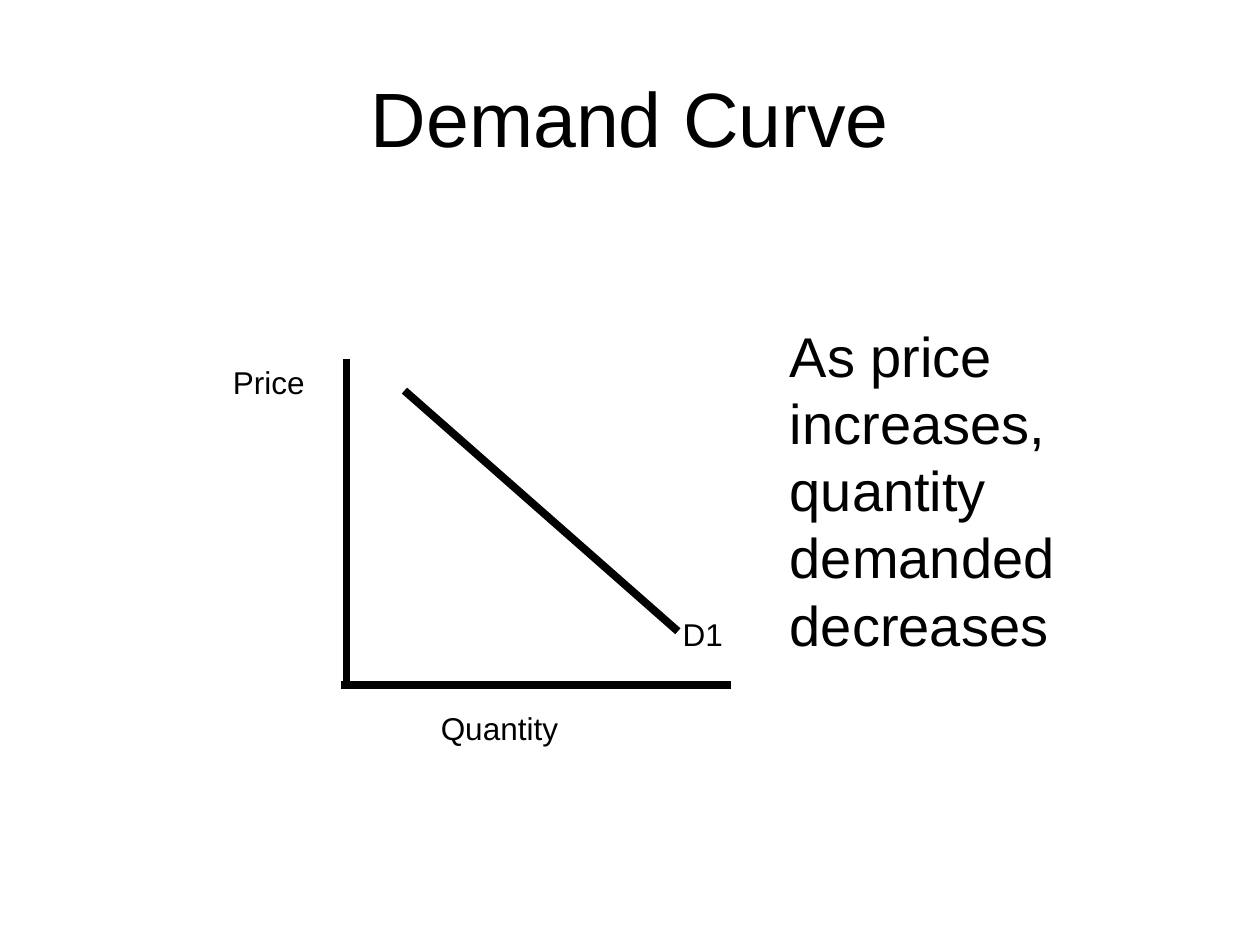
from lxml import etree
from pptx import Presentation
from pptx.dml.color import RGBColor
from pptx.enum.shapes import MSO_CONNECTOR
from pptx.enum.text import MSO_ANCHOR, PP_ALIGN
from pptx.oxml.ns import qn
from pptx.util import Pt

STRAIGHT = MSO_CONNECTOR.STRAIGHT
LEFT, CENTER = PP_ALIGN.LEFT, PP_ALIGN.CENTER
TOP, MIDDLE = MSO_ANCHOR.TOP, MSO_ANCHOR.MIDDLE
COLUMNS, ROWS = 10, 7.5
UNIT = Pt(72)
INK, PAPER = "000000", "FFFFFF"


def color(hex_code):
    """Turn a hex string into a colour."""
    return RGBColor.from_string(hex_code)


def grid(*cells):
    """Turn columns or rows of the grid into slide lengths."""
    return [round(cell * UNIT) for cell in cells]


def add_text(page, box, text, size, align=LEFT, anchor=TOP):
    """Place one wrapped paragraph in a box of grid units."""
    frame = page.shapes.add_textbox(*grid(*box)).text_frame
    frame.word_wrap = True
    frame.vertical_anchor = anchor
    para = frame.paragraphs[0]
    para.alignment = align
    span = para.add_run()
    span.text = text
    span.font.name = "Arial"
    span.font.size = Pt(size)
    span.font.color.rgb = color(INK)


def add_line(page, start, end):
    """Draw a thick straight line between two grid points."""
    line = page.shapes.add_connector(STRAIGHT, *grid(*start, *end))
    line.line.color.rgb = color(INK)
    line.line.width = Pt(4.5)
    properties = line.element.find(qn("p:spPr"))
    etree.SubElement(properties, qn("a:effectLst"))


def add_demand_diagram(page, box):
    """Draw the axes, the demand line and their labels inside a box."""
    left, top, width, height = box
    axis_x, axis_y = left + 1, top + height - 0.54
    lines = [
        ((axis_x, top + 0.02), (axis_x, axis_y - 0.01)),
        ((axis_x - 0.04, axis_y), (left + width - 0.27, axis_y)),
        ((axis_x + 0.46, top + 0.27), (left + width - 0.69, axis_y - 0.43)),
    ]
    labels = [
        ("Price", left, top, 0.83),
        ("Quantity", axis_x + 0.65, axis_y + 0.14, 1.42),
        ("D1", left + width - 0.75, axis_y - 0.61, 0.75),
    ]
    for start, end in lines:
        add_line(page, start, end)
    for text, x, y, label_width in labels:
        add_text(page, (x, y, label_width, 0.4), text, 18)


def main():
    """Build and save the demand curve slide."""
    deck = Presentation()
    deck.slide_width, deck.slide_height = grid(COLUMNS, ROWS)
    page = deck.slides.add_slide(deck.slide_layouts[6])
    page.background.fill.solid()
    page.background.fill.fore_color.rgb = color(PAPER)
    add_text(page, (0.5, 0.3, COLUMNS - 1, 1.25), "Demand Curve", 44, CENTER, MIDDLE)
    add_demand_diagram(page, (1.75, 2.83, 4.32, 3.15))
    add_text(page, (6.17, 2.5, 2.92, 2.77),
             "As price increases, quantity demanded decreases", 32)
    deck.save("out.pptx")


if __name__ == "__main__":
    main()
